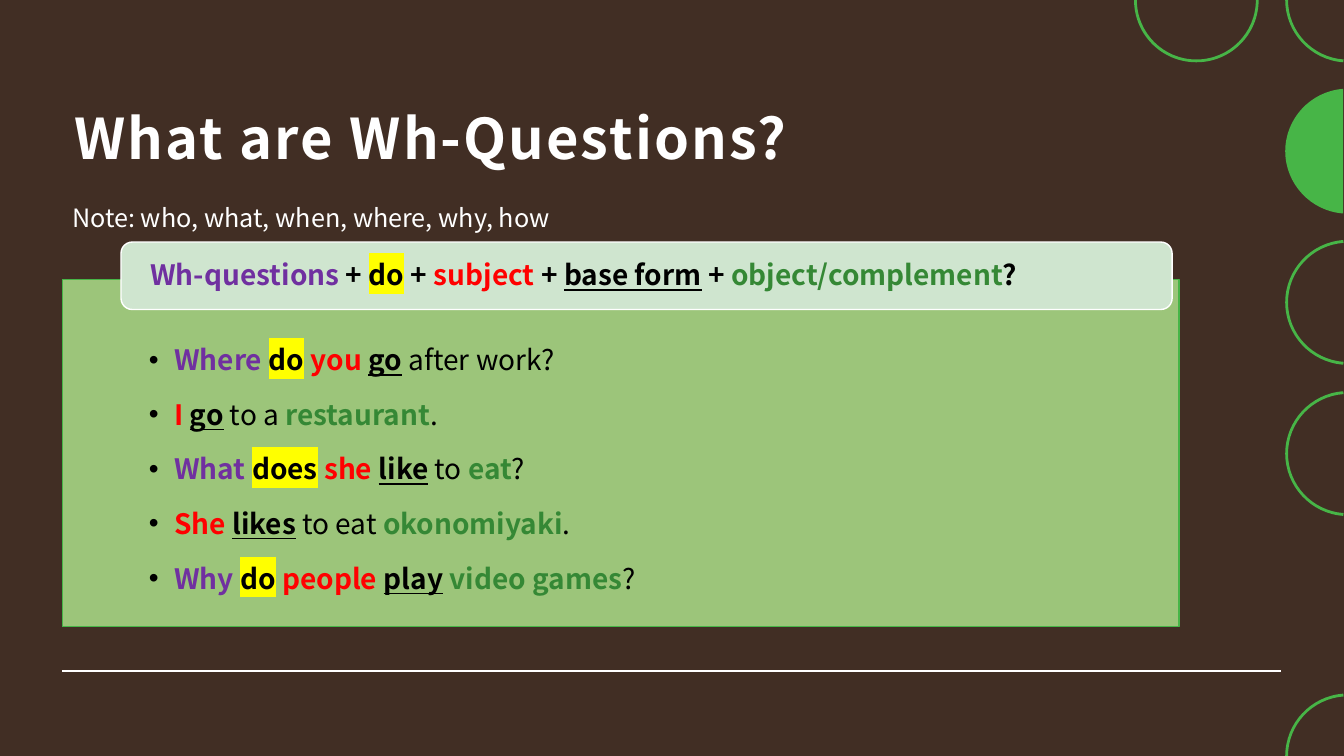
from dataclasses import dataclass
from math import ceil, cos, radians, sin, tan

from lxml import etree
from pptx import Presentation
from pptx.dml.color import RGBColor
from pptx.enum.shapes import MSO_CONNECTOR, MSO_SHAPE
from pptx.enum.text import MSO_ANCHOR, MSO_AUTO_SIZE, PP_ALIGN
from pptx.oxml.ns import qn
from pptx.util import Cm, Pt

STRAIGHT = MSO_CONNECTOR.STRAIGHT
ROUNDED = MSO_SHAPE.ROUNDED_RECTANGLE
TOP = MSO_ANCHOR.TOP
MIDDLE = MSO_ANCHOR.MIDDLE
NO_AUTOFIT = MSO_AUTO_SIZE.NONE
LEFT = PP_ALIGN.LEFT

CIRCLE_PITCH = 3.81
OUTER_RADIUS = 1.57
INNER_RADIUS = 1.5


@dataclass(frozen=True)
class Theme:
    font: str = "Noto Sans CJK JP"
    background: str = "412E24"
    accent: str = "47B547"
    panel: str = "A6D684"
    band: str = "CFE5CF"
    light: str = "FFFFFF"
    dark: str = "000000"
    question: str = "7030A0"
    subject: str = "FF0000"
    complement: str = "358835"
    highlight: str = "FFFF00"
    title_size: int = 40
    text_size: int = 20
    note_size: int = 18


FORMULA = [
    ("Wh-questions ", "question"), ("+ ", "strong"), ("do", "auxiliary"),
    (" + ", "strong"), ("subject ", "subject"), ("+ ", "strong"),
    ("base form", "verb"), (" + ", "strong"),
    ("object/complement", "complement"), ("?", "strong"),
]

EXAMPLES = [
    [("Where ", "question"), ("do", "auxiliary"), (" ", "plain"),
     ("you ", "subject"), ("go", "verb"), (" after work?", "plain")],
    [("I ", "subject"), ("go", "verb"), (" to a ", "plain"),
     ("restaurant", "complement"), (".", "plain")],
    [("What ", "question"), ("does", "auxiliary"), (" ", "plain"),
     ("she ", "subject"), ("like", "verb"), (" to ", "plain"),
     ("eat", "complement"), ("?", "plain")],
    [("She ", "subject"), ("likes", "verb"), (" to eat ", "plain"),
     ("okonomiyaki", "complement"), (".", "plain")],
    [("Why ", "question"), ("do", "auxiliary"), (" ", "plain"),
     ("people ", "subject"), ("play", "verb"), (" ", "plain"),
     ("video games", "complement"), ("?", "plain")],
]


def arc_points(center_x, center_y, radius, start, end):
    count = ceil(abs(end - start) / 90)
    step = radians(end - start) / count
    reach = radius * 4 / 3 * tan(step / 4)
    points = []
    for index in range(count + 1):
        angle = radians(start) + index * step
        x = center_x + radius * cos(angle)
        y = center_y + radius * sin(angle)
        shift_x, shift_y = -reach * sin(angle), reach * cos(angle)
        points += [(x - shift_x, y - shift_y), (x, y), (x + shift_x, y + shift_y)]
    return [(Cm(round(x, 2)), Cm(round(y, 2))) for x, y in points[1:-1]]


class SlideBuilder:
    def __init__(self, presentation, theme):
        self.theme = theme
        self.slide = presentation.slides.add_slide(presentation.slide_layouts[1])
        background = self.slide.background.fill
        background.solid()
        background.fore_color.rgb = RGBColor.from_string(theme.background)

    def place(self, shape, left, top, width, height):
        shape.left, shape.top = Cm(left), Cm(top)
        shape.width, shape.height = Cm(width), Cm(height)

    def paint(self, shape, fill, line=None):
        shape.fill.solid()
        shape.fill.fore_color.rgb = RGBColor.from_string(fill)
        if line:
            shape.line.color.rgb = RGBColor.from_string(line)
            shape.line.width = Pt(1)
        else:
            shape.line.fill.background()

    def frame(self, shape, anchor, left, top, right, bottom):
        text_frame = shape.text_frame
        text_frame.word_wrap = True
        text_frame.auto_size = NO_AUTOFIT
        text_frame.vertical_anchor = anchor
        text_frame.margin_left, text_frame.margin_top = Cm(left), Cm(top)
        text_frame.margin_right, text_frame.margin_bottom = Cm(right), Cm(bottom)
        return text_frame

    def style(self, run, size, color, bold=False):
        run.font.name = self.theme.font
        run.font.size = Pt(size)
        run.font.bold = bold
        run.font.color.rgb = RGBColor.from_string(color)

    def write_roles(self, paragraph, segments):
        theme = self.theme
        for text, role in segments:
            run = paragraph.add_run()
            run.text = text
            color = getattr(theme, role, theme.dark)
            self.style(run, theme.text_size, color, role != "plain")
            if role == "verb":
                run.font.underline = True
            if role == "auxiliary":
                highlight = etree.Element(qn("a:highlight"))
                etree.SubElement(highlight, qn("a:srgbClr"), val=theme.highlight)
                run.font._element.find(qn("a:solidFill")).addnext(highlight)

    def title(self, text):
        shape = self.slide.shapes.title
        self.place(shape, 1.57, 2.13, 28.14, 3.53)
        text_frame = self.frame(shape, TOP, 0.3, 0.3, 0.3, 0.25)
        text_frame.text = text
        paragraph = text_frame.paragraphs[0]
        paragraph.alignment = LEFT
        paragraph.line_spacing = 1.1
        run = paragraph.runs[0]
        self.style(run, self.theme.title_size, self.theme.light, True)
        run.font._element.set("spc", "150")

    def examples(self, sentences):
        shape = self.slide.placeholders[1]
        self.place(shape, 1.57, 7.04, 28.14, 8.75)
        self.paint(shape, self.theme.panel, self.theme.accent)
        fill_color = shape._element.spPr.find(qn("a:solidFill"))[0]
        etree.SubElement(fill_color, qn("a:alpha"), val="90000")
        text_frame = self.frame(shape, TOP, 2.18, 1.17, 2.18, 0.41)
        for index, segments in enumerate(sentences):
            paragraph = text_frame.add_paragraph() if index else text_frame.paragraphs[0]
            self.write_roles(paragraph, segments)
            paragraph.line_spacing = 1.5
            paragraph.space_before = Pt(0)
            paragraph.space_after = Pt(3)
            self.bullet(paragraph)

    def bullet(self, paragraph):
        properties = paragraph._p.get_or_add_pPr()
        properties.set("marL", str(Cm(0.64)))
        properties.set("indent", str(-Cm(0.64)))
        color = etree.SubElement(properties, qn("a:buClr"))
        etree.SubElement(color, qn("a:srgbClr"), val=self.theme.dark)
        etree.SubElement(properties, qn("a:buFont"), typeface="Arial")
        etree.SubElement(properties, qn("a:buChar"), char="•")

    def formula(self, segments):
        band = self.slide.shapes.add_shape(
            ROUNDED, Cm(3.05), Cm(6.1), Cm(26.49), Cm(1.7))
        band.shadow.inherit = False
        self.paint(band, self.theme.band, self.theme.light)
        label = self.slide.shapes.add_textbox(Cm(3.05), Cm(6.2), Cm(26.34), Cm(1.55))
        text_frame = self.frame(label, MIDDLE, 0.74, 0, 0.74, 0)
        paragraph = text_frame.paragraphs[0]
        paragraph.line_spacing = 0.9
        self.write_roles(paragraph, segments)

    def note(self, text):
        shape = self.slide.shapes.add_textbox(Cm(1.57), Cm(4.98), Cm(25.55), Cm(1.02))
        text_frame = self.frame(shape, TOP, 0.25, 0.13, 0.25, 0.13)
        text_frame.text = text
        run = text_frame.paragraphs[0].runs[0]
        self.style(run, self.theme.note_size, self.theme.light)

    def circle(self, center_x, center_y, start, end, filled=False):
        points = arc_points(center_x, center_y, OUTER_RADIUS, start, end)
        curve_starts = list(range(0, len(points) - 1, 3))
        if not filled:
            curve_starts += [len(points) + first for first in curve_starts]
            points += arc_points(center_x, center_y, INNER_RADIUS, end, start)
        builder = self.slide.shapes.build_freeform(*points[0], scale=1.0)
        builder.add_line_segments(points[1:], close=True)
        shape = builder.convert_to_shape()
        lines = list(shape._element.iter(qn("a:lnTo")))
        for first in curve_starts:
            curve = etree.Element(qn("a:cubicBezTo"))
            lines[first].addprevious(curve)
            for line in lines[first:first + 3]:
                curve.append(line[0])
                line.getparent().remove(line)
        shape.shadow.inherit = False
        self.paint(shape, self.theme.accent)

    def rule(self, left, right, y):
        connector = self.slide.shapes.add_connector(
            STRAIGHT, Cm(left), Cm(y), Cm(right), Cm(y))
        connector.line.color.rgb = RGBColor.from_string(self.theme.light)
        connector.line.width = Pt(1)
        etree.SubElement(connector._element.spPr, qn("a:effectLst"))


def main():
    presentation = Presentation()
    presentation.slide_width = Cm(33.87)
    presentation.slide_height = Cm(19.05)
    builder = SlideBuilder(presentation, Theme())
    builder.title("What are Wh-Questions?")
    builder.examples(EXAMPLES)
    right_column = 33.96
    builder.circle(right_column - CIRCLE_PITCH, 0, 0, 180)
    for row, start, end in ((0, 94, 180), (1, 94, 266), (2, 94, 266), (3, 94, 266), (5, 180, 266)):
        builder.circle(right_column, row * CIRCLE_PITCH, start, end, filled=row == 1)
    builder.rule(1.57, 32.28, 16.91)
    builder.formula(FORMULA)
    builder.note("Note: who, what, when, where, why, how")
    presentation.save("out.pptx")


if __name__ == "__main__":
    main()
